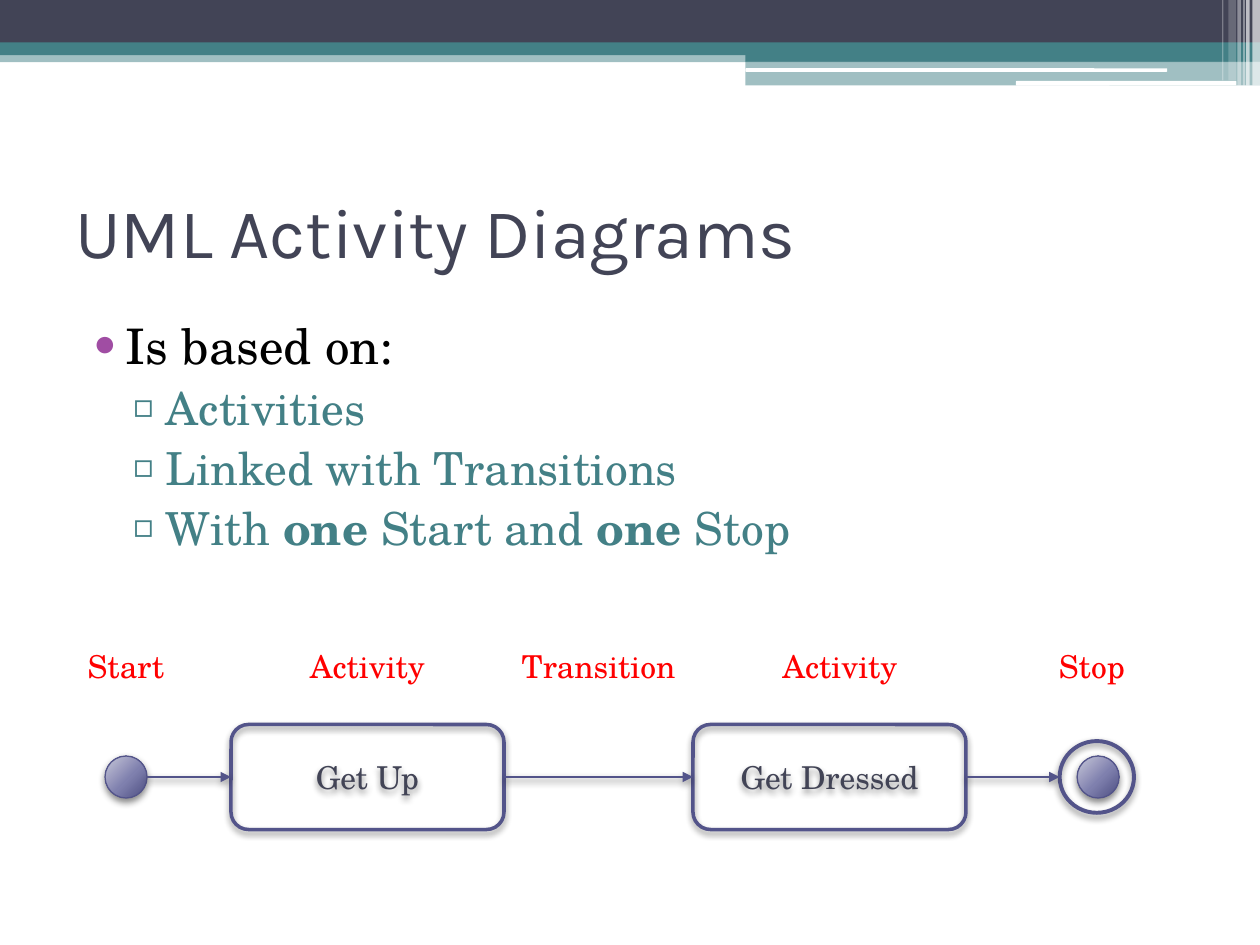
from lxml import etree
from pptx import Presentation
from pptx.dml.color import RGBColor
from pptx.enum import shapes, text
from pptx.oxml import ns, parse_xml
from pptx.util import Pt

NAVY = RGBColor(0x42, 0x44, 0x56)
TEAL = RGBColor(0x43, 0x80, 0x86)
INDIGO = RGBColor(0x53, 0x54, 0x8A)
PURPLE = RGBColor(0xA0, 0x4D, 0xA3)
RED = RGBColor(0xFF, 0, 0)
BLACK = RGBColor(0, 0, 0)
WHITE = RGBColor(0xFF, 0xFF, 0xFF)
DOT_STOPS = [(0, RGBColor(0xC9, 0xC9, 0xDA)), (55, RGBColor(0x7F, 0x80, 0xAE)),
             (100, RGBColor(0x4D, 0x4E, 0x81))]
SERIF, SANS = "TeX Gyre Schola", "Karla"
RECT = shapes.MSO_SHAPE.RECTANGLE
ROUND = shapes.MSO_SHAPE.ROUNDED_RECTANGLE
OVAL = shapes.MSO_SHAPE.OVAL


def sub(parent, tag, **attributes):
    """Append a DrawingML child element."""
    child = etree.SubElement(parent, ns.qn(tag))
    for name, value in attributes.items():
        child.set(name, str(value))
    return child


def add_shadow(properties, blur, alpha):
    """Cast a soft shadow straight down."""
    effects = properties.find(ns.qn("a:effectLst"))
    if effects is None:
        effects = sub(properties, "a:effectLst")
    shadow = sub(effects, "a:outerShdw", blurRad=Pt(blur), dist=Pt(2),
                 dir=5400000, algn="ctr", rotWithShape=0)
    sub(sub(shadow, "a:srgbClr", val=BLACK), "a:alpha", val=alpha * 1000)


def add_band(slide, kind, box, color, opacity=100):
    """Add a borderless coloured band."""
    band = slide.shapes.add_shape(kind, *map(Pt, box))
    band.shadow.inherit = False
    band.fill.solid()
    band.fill.fore_color.rgb = color
    band.line.fill.background()
    if opacity < 100:
        tint = band.fill._xPr.find(ns.qn("a:solidFill"))[0]
        sub(tint, "a:alpha", val=opacity * 1000)


def add_header(slide, left, top, width):
    """Draw the layered bands and the pale stripes at the right edge."""
    step, right = left + 426, left + width
    bands = [(RECT, left, 29, width, 6.5, TEAL, 50),
             (RECT, left, 0, width, 24.5, NAVY, 100),
             (RECT, left, 24.3, width, 7.2, TEAL, 100),
             (RECT, step, 28, width - 426, 7.2, TEAL, 100),
             (RECT, step, 34.8, width - 426, 14, TEAL, 50),
             (ROUND, step, 39, 241, 2, WHITE, 100),
             (ROUND, left + 580.5, 46.3, 126, 2.6, WHITE, 100)]
    for kind, x, y, w, h, color, opacity in bands:
        add_band(slide, kind, (x, top + y, w, h), color, opacity)
    stripes = [(4.3, 4.3, 49, 65), (7.9, 2, 49, 65), (9.5, 0.7, 49, 60),
               (12.9, 2, 49, 40), (18, 4.3, 46, 20), (21.6, 0.7, 46, 30)]
    for inset, w, h, opacity in stripes:
        add_band(slide, RECT, (right - inset, top, w, h), WHITE, opacity)


def add_run(paragraph, words, size, color, font=SERIF, bold=None):
    """Add one formatted run."""
    run = paragraph.add_run()
    run.text = words
    run.font.name, run.font.size, run.font.bold = font, Pt(size), bold
    run.font.color.rgb = color


def add_frame(slide, box, anchor=text.MSO_ANCHOR.TOP):
    """Add a wrapping text box and return its frame."""
    frame = slide.shapes.add_textbox(*map(Pt, box)).text_frame
    frame.word_wrap = True
    frame.vertical_anchor = anchor
    return frame


def add_title(slide, box):
    """Place the slide title."""
    frame = add_frame(slide, box, text.MSO_ANCHOR.MIDDLE)
    add_run(frame.paragraphs[0], "UML Activity Diagrams", 40, NAVY, SANS)


def add_bullets(slide, box):
    """Place the bullet list with its second level."""
    items = [(0, ["Is based on:"]), (1, ["Activities"]),
             (1, ["Linked with Transitions"]),
             (1, ["With ", "one ", "Start and ", "one ", "Stop"])]
    levels = [(28.8, -20.2, "•", PURPLE, 28, BLACK),
              (51.8, -19.4, "▫", TEAL, 26, TEAL)]
    frame = add_frame(slide, box)
    for index, (level, parts) in enumerate(items):
        margin, indent, mark, mark_color, size, color = levels[level]
        paragraph = frame.add_paragraph() if index else frame.paragraphs[0]
        paragraph.level = level
        paragraph.space_before = Pt(3)
        properties = paragraph._p.get_or_add_pPr()
        properties.set("marL", str(Pt(margin)))
        properties.set("indent", str(Pt(indent)))
        sub(sub(properties, "a:buClr"), "a:srgbClr", val=mark_color)
        sub(properties, "a:buFont", typeface=SERIF)
        sub(properties, "a:buChar", char=mark)
        for part in parts:
            add_run(paragraph, part, size, color, bold=part == "one ")


def add_node(slide, kind, box, weight):
    """Add an outlined, unfilled, shadowed node."""
    node = slide.shapes.add_shape(kind, *map(Pt, box))
    node.fill.background()
    node.line.color.rgb = INDIGO
    node.line.width = Pt(weight)
    node.shadow.inherit = False
    add_shadow(node._element.spPr, 4, 45)
    return node


def add_dot(slide, box):
    """Add a ball with a radial gradient."""
    dot = add_node(slide, OVAL, box, 0.75)
    gradient = parse_xml(f'<a:gradFill {ns.nsdecls("a")} rotWithShape="1"/>')
    stops = sub(gradient, "a:gsLst")
    for position, color in DOT_STOPS:
        stop = sub(stops, "a:gs", pos=position * 1000)
        sub(stop, "a:srgbClr", val=color)
    circle = sub(gradient, "a:path", path="circle")
    sub(circle, "a:fillToRect", l=-40000, t=-90000, r=140000, b=190000)
    properties = dot._element.spPr
    properties.replace(properties.find(ns.qn("a:noFill")), gradient)


def add_activity(slide, box, words):
    """Add a rounded activity box with its name."""
    activity = add_node(slide, ROUND, box, 2)
    frame = activity.text_frame
    frame.vertical_anchor = text.MSO_ANCHOR.MIDDLE
    frame.paragraphs[0].alignment = text.PP_ALIGN.CENTER
    add_run(frame.paragraphs[0], words, 18, NAVY)
    return activity


def add_transition(slide, start, end, y, source=None, target=None):
    """Add an arrow, joined to the activities it touches."""
    arrow = slide.shapes.add_connector(
        shapes.MSO_CONNECTOR.STRAIGHT, Pt(start), Pt(y), Pt(end), Pt(y))
    arrow.line.color.rgb = INDIGO
    arrow.line.width = Pt(1.5)
    sub(arrow.line._get_or_add_ln(), "a:tailEnd", type="triangle")
    add_shadow(arrow._element.spPr, 4.1, 40)
    if source is not None:
        arrow.begin_connect(source, 3)
    if target is not None:
        arrow.end_connect(target, 1)


def add_diagram(slide, left, top):
    """Draw the labelled activity flow from start to stop."""
    axis, box_top = top + 78, top + 48
    first_left, second_left, ring_left = left + 96, left + 360, left + 569.5
    add_node(slide, OVAL, (ring_left, axis - 20.5, 42.5, 41), 2.25)
    for dot_left in (left + 24, left + 579.5):
        add_dot(slide, (dot_left, axis - 12, 24, 24))
    get_up = add_activity(slide, (first_left, box_top, 156, 60), "Get Up")
    get_dressed = add_activity(
        slide, (second_left, box_top, 156, 60), "Get Dressed")
    add_transition(slide, left + 48, first_left, axis, target=get_up)
    add_transition(slide, first_left + 156, second_left, axis, get_up, get_dressed)
    add_transition(slide, second_left + 156, ring_left, axis, get_dressed)
    labels = [("Start", 0, 72), ("Activity", 120, 108), ("Transition", 252, 108),
              ("Activity", 390, 108), ("Stop", 552, 72)]
    for words, x, width in labels:
        frame = add_frame(slide, (left + x, top, width, 29))
        frame.auto_size = text.MSO_AUTO_SIZE.SHAPE_TO_FIT_TEXT
        frame.paragraphs[0].alignment = text.PP_ALIGN.CENTER
        add_run(frame.paragraphs[0], words, 18, RED)


def main():
    """Build and save the slide."""
    deck = Presentation()
    deck.slide_width, deck.slide_height = Pt(720), Pt(540)
    slide = deck.slides.add_slide(deck.slide_layouts[6])
    add_header(slide, 0, 0, 720)
    add_title(slide, (36, 90, 648, 84))
    add_bullets(slide, (36, 177, 648, 165))
    add_diagram(slide, 36, 366)
    deck.save("out.pptx")


if __name__ == "__main__":
    main()
